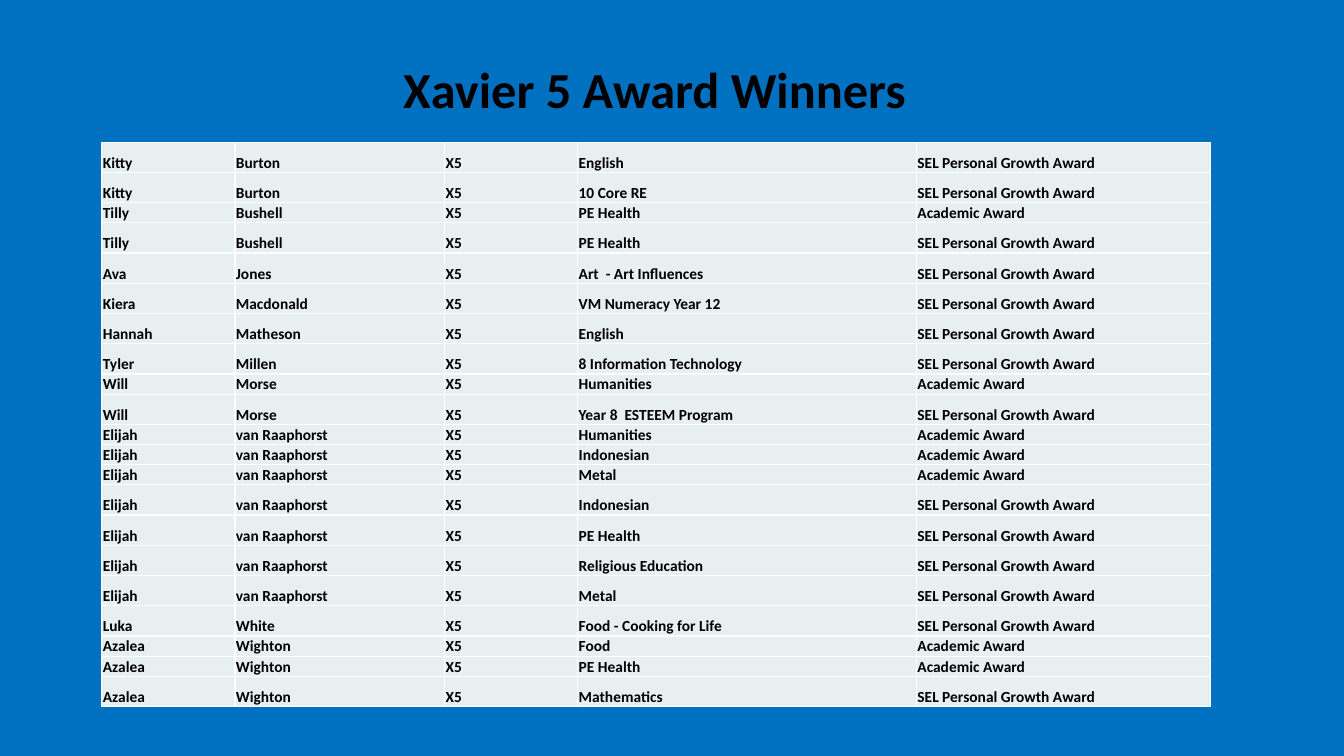
from lxml import etree
from pptx import Presentation
from pptx.dml.color import RGBColor
from pptx.enum.text import MSO_ANCHOR, PP_ALIGN
from pptx.oxml.ns import qn
from pptx.util import Inches, Pt

CENTER = PP_ALIGN.CENTER
TOP, BOTTOM = MSO_ANCHOR.TOP, MSO_ANCHOR.BOTTOM
FONT = "Calibri"
COLORS = {"background": "0070C0", "cell": "E8EFEF", "border": "FFFFFF", "text": "000000"}

# Table grid: column widths and row heights in units
COL_UNIT, ROW_UNIT = Inches(0.04), Inches(0.1)
COLUMNS = (33, 52, 33, 84, 73)
CLASS = "X5"
ACADEMIC, GROWTH = "Academic Award", "SEL Personal Growth Award"
ROW_HEIGHTS = {ACADEMIC: 2, GROWTH: 3}

# Awards of each student as (subject, award)
WINNERS = [
    ("Kitty", "Burton", [("English", GROWTH), ("10 Core RE", GROWTH)]),
    ("Tilly", "Bushell", [("PE Health", ACADEMIC), ("PE Health", GROWTH)]),
    ("Ava", "Jones", [("Art  - Art Influences", GROWTH)]),
    ("Kiera", "Macdonald", [("VM Numeracy Year 12", GROWTH)]),
    ("Hannah", "Matheson", [("English", GROWTH)]),
    ("Tyler", "Millen", [("8 Information Technology", GROWTH)]),
    ("Will", "Morse", [("Humanities", ACADEMIC), ("Year 8  ESTEEM Program", GROWTH)]),
    ("Elijah", "van Raaphorst", [
        ("Humanities", ACADEMIC), ("Indonesian", ACADEMIC), ("Metal", ACADEMIC),
        ("Indonesian", GROWTH), ("PE Health", GROWTH),
        ("Religious Education", GROWTH), ("Metal", GROWTH),
    ]),
    ("Luka", "White", [("Food - Cooking for Life", GROWTH)]),
    ("Azalea", "Wighton", [
        ("Food", ACADEMIC), ("PE Health", ACADEMIC), ("Mathematics", GROWTH),
    ]),
]


def rgb(name):
    return RGBColor.from_string(COLORS[name])


def write(tf, text, size):
    tf.text = text
    p = tf.paragraphs[0]
    font = p.runs[0].font
    font.name, font.size, font.bold = FONT, Pt(size), True
    font.color.rgb = rgb("text")
    return p


def add_title(slide, text, left, top, width, height):
    tf = slide.shapes.add_textbox(left, top, width, height).text_frame
    tf.word_wrap = True
    tf.vertical_anchor = TOP
    p = write(tf, text, 36)
    p.alignment = CENTER
    p.line_spacing = 0.9


def add_borders(cell):
    tc_pr = cell._tc.get_or_add_tcPr()
    for i, side in enumerate(("lnL", "lnR", "lnT", "lnB")):
        ln = etree.Element(qn(f"a:{side}"), w=str(Pt(1)))
        fill = etree.SubElement(ln, qn("a:solidFill"))
        etree.SubElement(fill, qn("a:srgbClr"), val=COLORS["border"])
        tc_pr.insert(i, ln)


def fill_cell(cell, text):
    cell.margin_left = cell.margin_right = cell.margin_top = Inches(0.01)
    cell.margin_bottom = 0
    cell.vertical_anchor = BOTTOM
    cell.fill.solid()
    cell.fill.fore_color.rgb = rgb("cell")
    add_borders(cell)
    write(cell.text_frame, text, 11)


def add_award_table(slide, left, top):
    rows = [
        (first, last, CLASS, subject, award)
        for first, last, awards in WINNERS
        for subject, award in awards
    ]
    heights = [ROW_HEIGHTS[row[-1]] * ROW_UNIT for row in rows]
    widths = [units * COL_UNIT for units in COLUMNS]
    table = slide.shapes.add_table(
        len(rows), len(widths), left, top, sum(widths), sum(heights)
    ).table
    table.first_row = table.horz_banding = False
    for column, width in zip(table.columns, widths):
        column.width = width
    for r, (values, height) in enumerate(zip(rows, heights)):
        table.rows[r].height = height
        for c, text in enumerate(values):
            fill_cell(table.cell(r, c), text)


def main():
    prs = Presentation()
    prs.slide_width, prs.slide_height = Inches(13.33), Inches(7.5)
    slide = prs.slides.add_slide(prs.slide_layouts[6])

    def across(percent):
        return int(prs.slide_width * percent / 100)

    def down(percent):
        return int(prs.slide_height * percent / 100)

    # Background
    slide.background.fill.solid()
    slide.background.fill.fore_color.rgb = rgb("background")

    # Heading and award list
    add_title(slide, "Xavier 5 Award Winners", across(5), down(8), across(87.4), down(16.5))
    add_award_table(slide, across(7.58), down(18.8))

    prs.save("out.pptx")


if __name__ == "__main__":
    main()
